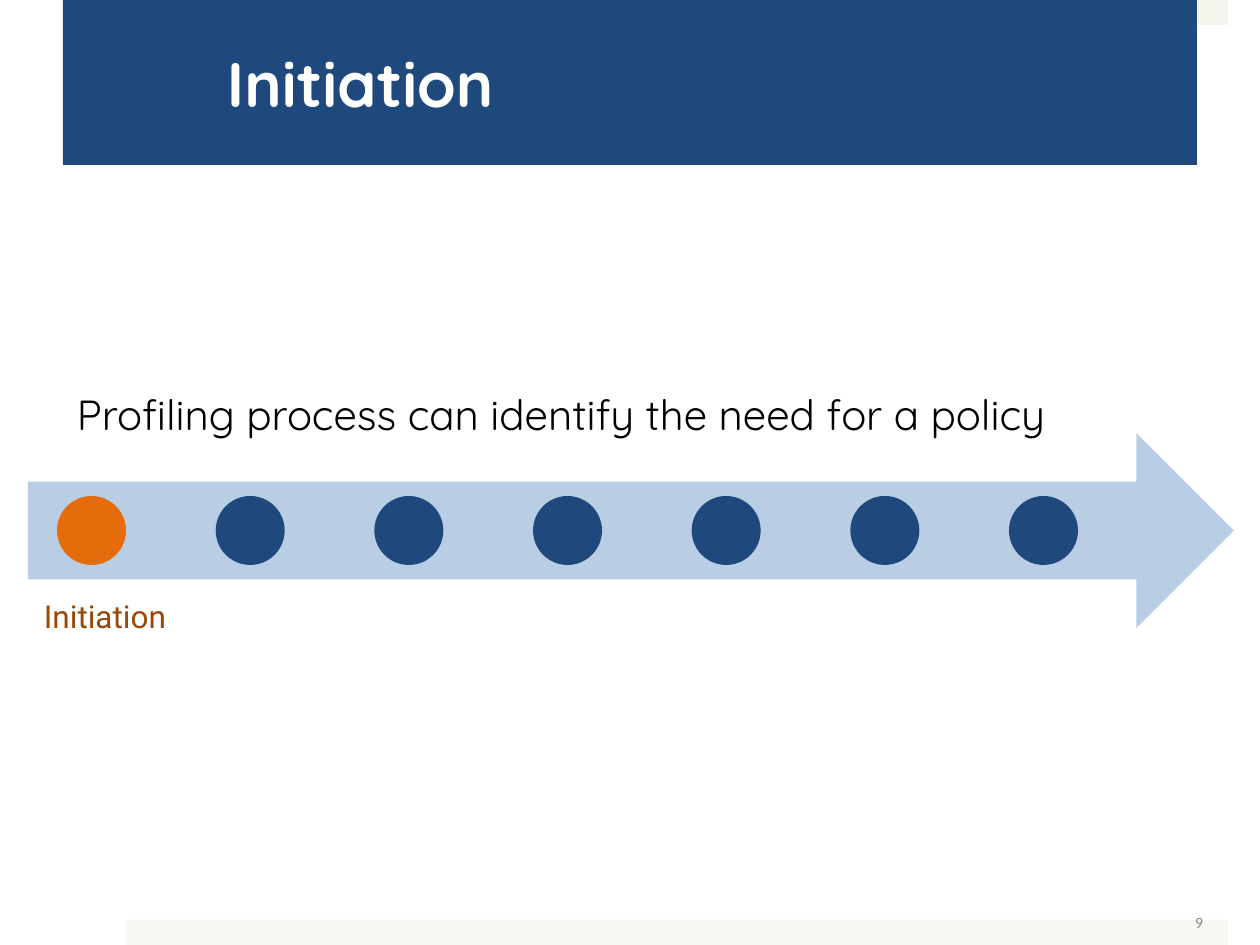
from pptx import Presentation
from pptx import util as u
from pptx.dml.color import RGBColor
from pptx.enum import shapes, text

SCALE = 914400 / 126
COLOURS = {
    "navy": "1F497D",
    "sky": "B9CDE5",
    "orange": "E46C0A",
    "brown": "984807",
    "cream": "F5F4ED",
    "ivory": "F8F7F3",
    "grey": "898989",
    "white": "FFFFFF",
    "black": "000000",
}
STAGES = 7
ACTIVE_STAGE = 0


def px(length):
    return u.Emu(round(length * SCALE))


def colour(name):
    return RGBColor.from_string(COLOURS[name])


def add_solid(page, kind, box, fill):
    shape = page.shapes.add_shape(kind, *map(px, box))
    shape.shadow.inherit = False
    shape.fill.solid()
    shape.fill.fore_color.rgb = colour(fill)
    shape.line.fill.background()
    return shape


def write(shape, words, font, size, ink, bold=False, align=text.PP_ALIGN.LEFT,
          anchor=text.MSO_ANCHOR.TOP, insets=(13, 6, 13, 6)):
    frame = shape.text_frame
    frame.word_wrap = True
    frame.vertical_anchor = anchor
    (frame.margin_left, frame.margin_top,
     frame.margin_right, frame.margin_bottom) = map(px, insets)
    frame.text = words
    para = frame.paragraphs[0]
    para.alignment = align
    span = para.runs[0]
    span.font.name = font
    span.font.size = u.Pt(size)
    span.font.bold = bold
    span.font.color.rgb = colour(ink)


def add_text(page, box, words, font, size, ink, **layout):
    shape = page.shapes.add_textbox(*map(px, box))
    write(shape, words, font, size, ink, **layout)


def add_backdrop(page, left, width, height, page_height):
    rectangle = shapes.MSO_SHAPE.RECTANGLE
    footer_top = page_height - height
    add_solid(page, rectangle, (left, 0, width, height), "cream")
    add_solid(page, rectangle, (left, footer_top, width, height), "ivory")
    add_text(page, (left + 793, footer_top - 23, 293, 50), "9", "Calibri", 9, "grey",
             align=text.PP_ALIGN.RIGHT, anchor=text.MSO_ANCHOR.MIDDLE,
             insets=(9, 5, 9, 5))


def add_title(page, box):
    banner = add_solid(page, shapes.MSO_SHAPE.RECTANGLE, box, "navy")
    write(banner, "Initiation", "Quicksand", 36, "white", bold=True,
          anchor=text.MSO_ANCHOR.MIDDLE, insets=(164, 6, 38, 6))


def add_timeline(page, left, top, width, height):
    add_solid(page, shapes.MSO_SHAPE.RIGHT_ARROW, (left, top, width, height), "sky")
    diameter = 69
    first, last = left + 29, left + 981
    dot_top = top + (height - diameter) // 2
    for stage in range(STAGES):
        dot_left = first + (last - first) * stage / (STAGES - 1)
        fill = "orange" if stage == ACTIVE_STAGE else "navy"
        add_solid(page, shapes.MSO_SHAPE.OVAL,
                  (dot_left, dot_top, diameter, diameter), fill)
    add_text(page, (left - 3, top + 158, 154, 50), "Initiation", "Roboto", 18, "brown",
             align=text.PP_ALIGN.RIGHT)


def main():
    deck = Presentation()
    deck.slide_width, deck.slide_height = px(1260), px(945)
    page = deck.slides.add_slide(deck.slide_layouts[6])
    add_backdrop(page, 126, 1102, 25, 945)
    add_title(page, (63, 0, 1134, 165))
    add_timeline(page, 28, 433, 1206, 195)
    add_text(page, (64, 383, 1070, 426),
             "Profiling process can identify the need for a policy",
             "Quicksand", 24, "black")
    deck.save("out.pptx")


if __name__ == "__main__":
    main()
